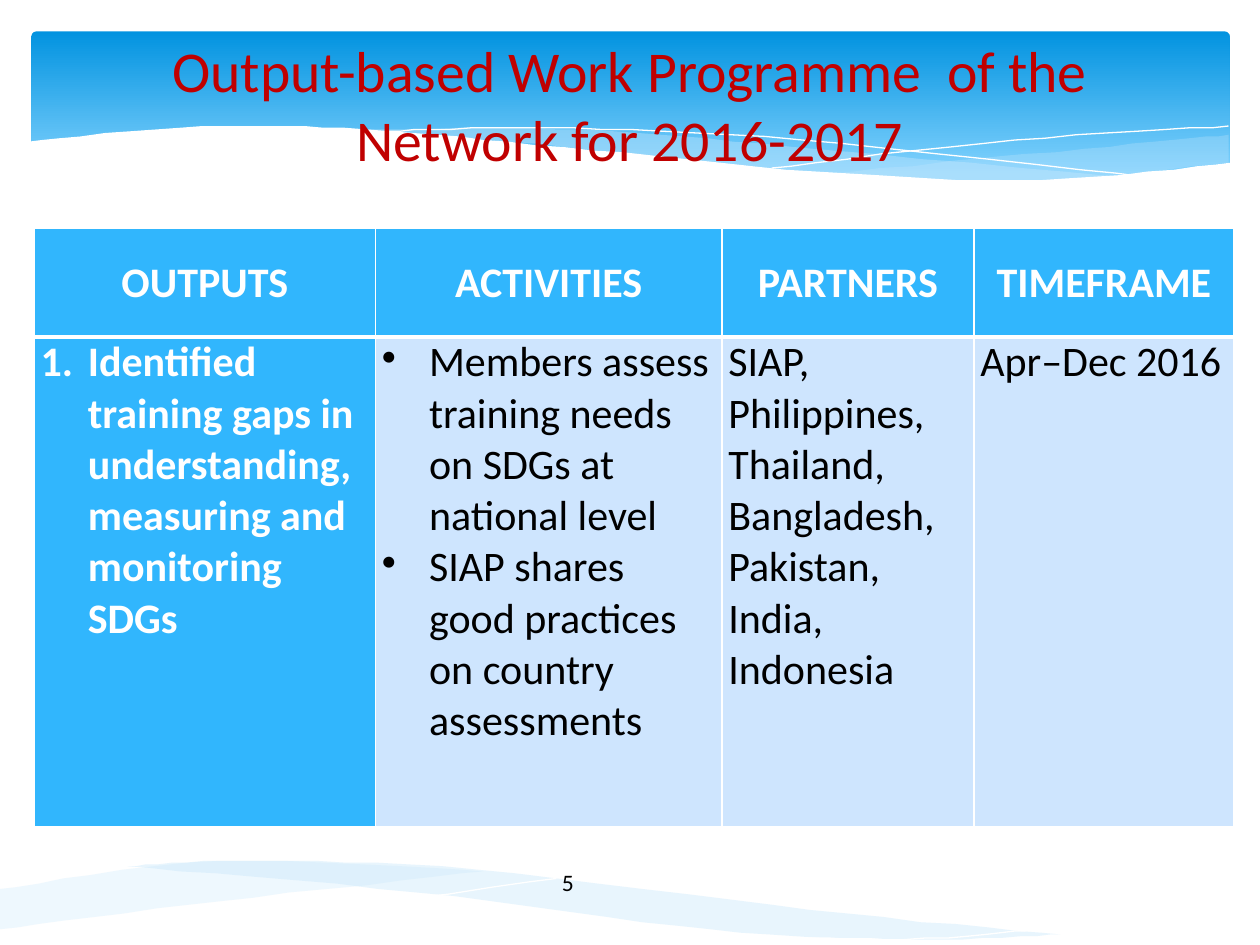
from lxml.etree import SubElement
from pptx import Presentation
from pptx.dml.color import RGBColor
from pptx.enum.shapes import MSO_SHAPE
from pptx.enum.text import MSO_ANCHOR, PP_ALIGN
from pptx.oxml.ns import qn
from pptx.util import Pt

WHITE = RGBColor(0xFF, 0xFF, 0xFF)
BLACK = RGBColor(0, 0, 0)
RED = RGBColor(0xC0, 0, 0)
BLUE = RGBColor(0x31, 0xB6, 0xFD)
PALE = RGBColor(0xCE, 0xE5, 0xFE)
MIST = RGBColor(0xC6, 0xE7, 0xFC)
DEEP = RGBColor(0x02, 0x93, 0xE0)
SKY = RGBColor(0x83, 0xD3, 0xFE)

TITLE = "Output-based Work Programme  of the Network for 2016-2017"
NUMBER = "5"
HEADS = ["OUTPUTS", "ACTIVITIES", "PARTNERS", "TIMEFRAME"]
# Each cell: bullet kind, then its paragraphs
BODY = [
    ("num", ["Identified training gaps in understanding, measuring and monitoring SDGs"]),
    ("dot", ["Members assess training needs on SDGs at national level",
             "SIAP shares good practices on country assessments"]),
    (None, ["SIAP, Philippines, Thailand, Bangladesh, Pakistan, India, Indonesia"]),
    (None, ["Apr–Dec 2016"]),
]
COLS = [195, 198, 144, 148.5]
ROWS = [62, 280]
BULLETS = {"num": ("a:buAutoNum", {"type": "arabicPeriod"}),
           "dot": ("a:buChar", {"char": "•"})}

# Each wave: opacity in percent (None for an open line), then its smooth edges
WAVES = [
    (29, [[(702, 77), (620, 85), (476, 99)], [(586, 104), (702, 93)]]),
    (40, [[(643, 101), (453, 84), (335, 74), (206, 74)],
          [(323, 84), (479, 100), (589, 104), (643, 101)]]),
    (None, [[(222, 75), (312, 73), (458, 80), (653, 101)]]),
    (None, [[(441, 96), (580, 80), (702, 72)]]),
    (100, [[(703, 93), (594, 103), (466, 98), (322, 84), (210, 74), (116, 72), (16, 81)],
           [(16, 121)], [(703, 121)]]),
    (40, [[(73, 495), (238, 510), (406, 531), (524, 537), (606, 534)],
          [(463, 520), (273, 497), (139, 492), (73, 495)]]),
    (None, [[(586, 532), (503, 537), (369, 531), (219, 518), (60, 495)]]),
    (None, [[(318, 502), (123, 528), (1, 537)]]),
    (29, [[(0, 531), (126, 515), (276, 498)], [(124, 492), (0, 508)]]),
]
STEPS = 8


def smooth(keys):
    """Return points on a Catmull-Rom curve through keys, without the first."""
    ends = [keys[0], *keys, keys[-1]]
    dots = []
    for a, b, c, d in zip(ends, ends[1:], ends[2:], ends[3:]):
        for step in range(1, STEPS + 1):
            t = step / STEPS
            dots.append(tuple(
                q + t / 2 * (r - p + t * (2 * p - 5 * q + 4 * r - s
                                          + t * (3 * (q - r) + s - p)))
                for p, q, r, s in zip(a, b, c, d)))
    return dots


def style(para, size, color, **extra):
    form = {"name": "Calibri", "size": Pt(size), **extra}
    for key, val in form.items():
        setattr(para.font, key, val)
    para.font.color.rgb = color


def banner(slide):
    box = slide.shapes.add_shape(MSO_SHAPE.ROUNDED_RECTANGLE,
                                 Pt(18), Pt(18), Pt(684.7), Pt(91.4))
    box.adjustments[0] = 0.03
    box.shadow.inherit = False
    box.line.fill.background()
    box.fill.gradient()
    box.fill.gradient_angle = 270
    for stop, place, color in zip(box.fill.gradient_stops, (0, 0.9), (DEEP, SKY)):
        stop.position = place
        stop.color.rgb = color


def wave(slide, alpha, edges):
    dots = [edges[0][0]]
    for edge in edges:
        keys = edge if edge[0] == dots[-1] else [dots[-1], *edge]
        dots += smooth(keys)
    path = slide.shapes.build_freeform(*dots[0], scale=Pt(1))
    path.add_line_segments(dots[1:], close=alpha is not None)
    shape = path.convert_to_shape()
    shape.shadow.inherit = False
    if alpha is None:
        shape.fill.background()
        shape.line.color.rgb = WHITE
        shape.line.width = Pt(0)
        return
    shape.line.fill.background()
    shape.fill.solid()
    shape.fill.fore_color.rgb = WHITE if alpha == 100 else MIST
    if alpha < 100:
        tint = shape._element.spPr.find(".//" + qn("a:srgbClr"))
        SubElement(tint, qn("a:alpha"), val=str(alpha * 1000))


def text(slide, words, area, size, color):
    box = slide.shapes.add_textbox(*map(Pt, area))
    box.text_frame.word_wrap = True
    para = box.text_frame.paragraphs[0]
    para.text = words
    style(para, size, color)
    return box.text_frame


def border(cell, base):
    """Draw white cell edges, with the bottom one base points wide."""
    props = cell._tc.get_or_add_tcPr()
    for side, width in (("L", 1), ("R", 1), ("T", 1), ("B", base)):
        edge = SubElement(props, qn("a:ln" + side), w=str(Pt(width)))
        fill = SubElement(edge, qn("a:solidFill"))
        SubElement(fill, qn("a:srgbClr"), val=str(WHITE))


def fill_cell(cell, kind, lines, head, dark):
    border(cell, 3 if head else 1)
    cell.fill.solid()
    cell.fill.fore_color.rgb = BLUE if dark else PALE
    form = {"margin_left": Pt(3.6), "margin_right": Pt(3.6),
            "margin_top": 0, "margin_bottom": 0,
            "vertical_anchor": MSO_ANCHOR.MIDDLE if head else MSO_ANCHOR.TOP}
    for key, val in form.items():
        setattr(cell, key, val)
    frame = cell.text_frame
    for i, line in enumerate(lines):
        para = frame.add_paragraph() if i else frame.paragraphs[0]
        para.text = line
        para.alignment = PP_ALIGN.CENTER if head else PP_ALIGN.LEFT
        if kind:
            props = para._p.get_or_add_pPr()
            props.set("marL", str(Pt(27)))
            props.set("indent", str(-Pt(27)))
            tag, attrs = BULLETS[kind]
            SubElement(props, qn(tag), attrs)
        style(para, 24, WHITE if dark else BLACK, bold=dark)


def grid(slide):
    table = slide.shapes.add_table(2, len(COLS), Pt(19.6), Pt(130.6),
                                   Pt(sum(COLS)), Pt(sum(ROWS))).table
    table.horz_banding = False
    for row, high in zip(table.rows, ROWS):
        row.height = Pt(high)
    for i, wide in enumerate(COLS):
        table.columns[i].width = Pt(wide)
        fill_cell(table.cell(0, i), None, [HEADS[i]], True, True)
        fill_cell(table.cell(1, i), *BODY[i], False, i == 0)


def main():
    deck = Presentation()
    deck.slide_width, deck.slide_height = Pt(720), Pt(540)
    slide = deck.slides.add_slide(deck.slide_layouts[6])
    banner(slide)
    for alpha, edges in WAVES:
        wave(slide, alpha, edges)
    grid(slide)
    text(slide, NUMBER, (314, 492.5, 91.4, 28.8), 13.5, BLACK)
    title = text(slide, TITLE, (36, 12.5, 648, 94), 33, RED)
    title.vertical_anchor = MSO_ANCHOR.MIDDLE
    title.paragraphs[0].alignment = PP_ALIGN.CENTER
    deck.save("out.pptx")


if __name__ == "__main__":
    main()
